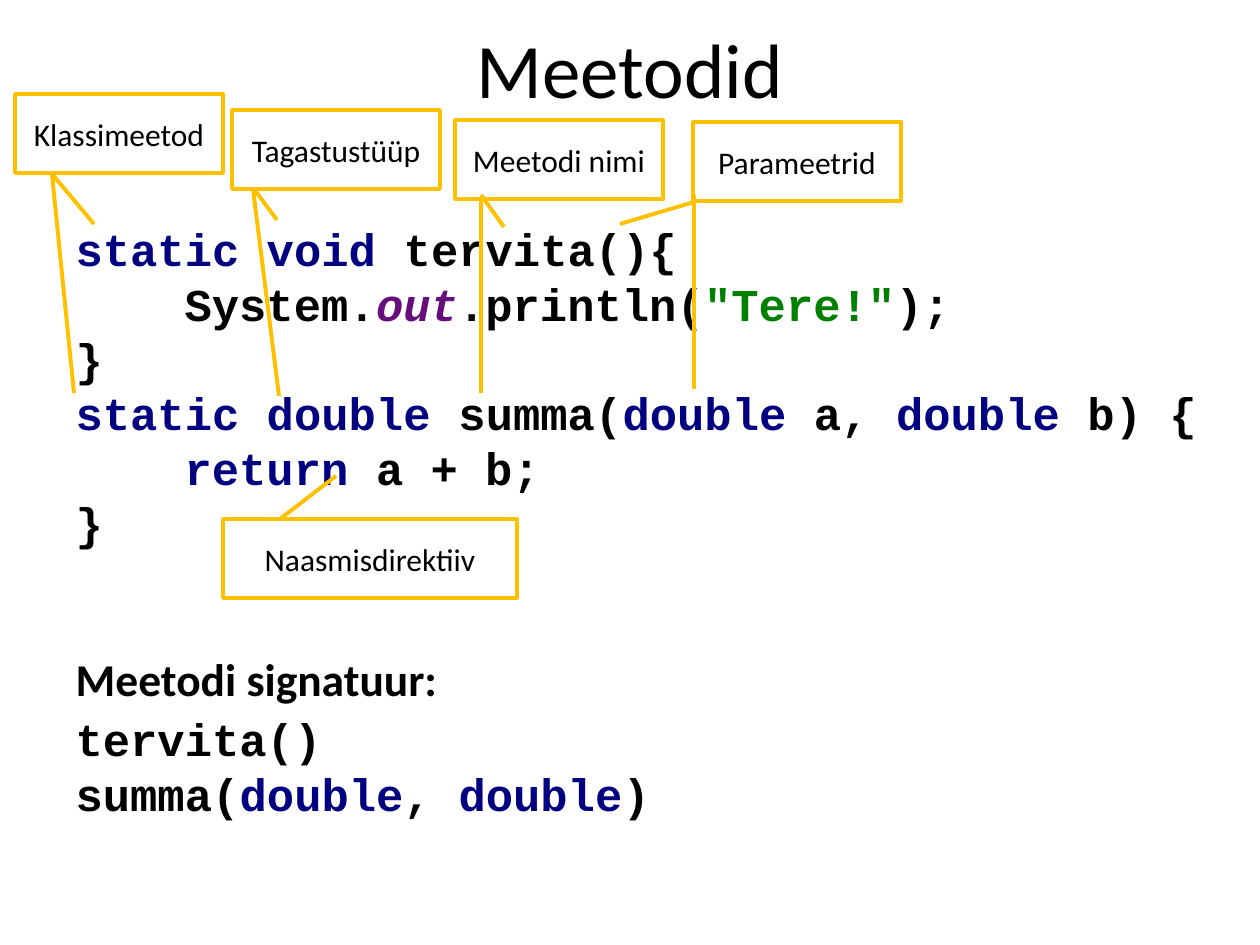
import pptx
import pptx.util
import pptx.dml.color
import pptx.enum.shapes
import pptx.enum.text
import pptx.oxml.ns
import lxml.etree

PX = 914400 / 126
COLORS = {
    "text": "000000",
    "keyword": "000080",
    "field": "660E7A",
    "string": "008000",
    "paper": "FFFFFF",
    "callout": "FFC000",
}


def emu(*lengths):
    return [round(length * PX) for length in lengths]


def add_run(paragraph, text, font, size, color="text"):
    run = paragraph.add_run()
    run.text = text
    run.font.name = font
    run.font.size = pptx.util.Pt(size)
    run.font.color.rgb = pptx.dml.color.RGBColor.from_string(COLORS[color])
    return run


presentation = pptx.Presentation()
presentation.slide_width, presentation.slide_height = emu(1260, 945)
slide = presentation.slides.add_slide(presentation.slide_layouts[1])
paper = pptx.dml.color.RGBColor.from_string(COLORS["paper"])
amber = pptx.dml.color.RGBColor.from_string(COLORS["callout"])

heading = slide.shapes.title
heading.left, heading.top, heading.width, heading.height = emu(63, 9, 1134, 118)
heading.text_frame.vertical_anchor = pptx.enum.text.MSO_ANCHOR.MIDDLE
heading_line = heading.text_frame.paragraphs[0]
heading_line.alignment = pptx.enum.text.PP_ALIGN.CENTER
add_run(heading_line, "Meetodid", "Calibri", 44)

code = slide.placeholders[1]
code.left, code.top, code.width, code.height = emu(63, 203, 1153, 658)
code.fill.solid()
code.fill.fore_color.rgb = paper
code_frame = code.text_frame
code_frame.word_wrap = True
code_frame.auto_size = pptx.enum.text.MSO_AUTO_SIZE.NONE
code_frame.vertical_anchor = pptx.enum.text.MSO_ANCHOR.TOP
code_frame.margin_top = emu(18)[0]

# indent in px, space before in points, font, runs
code_lines = [
    (0, 0, "Courier New", [("static void ", "keyword"), ("tervita(){", "text")]),
    (109, 0, "Courier New", [("System.", "text"), ("out", "field"), (".println(", "text"),
                             ("\"Tere!\"", "string"), (");", "text")]),
    (0, 0, "Courier New", [("}", "text")]),
    (0, 0, "Courier New", [("static double ", "keyword"), ("summa(", "text"),
                           ("double ", "keyword"), ("a, ", "text"),
                           ("double ", "keyword"), ("b) {", "text")]),
    (109, 0, "Courier New", [("return ", "keyword"), ("a + b;", "text")]),
    (0, 0, "Courier New", [("}", "text")]),
    (0, 58, "Calibri", [("Meetodi signatuur:", "text")]),
    (0, 3, "Courier New", [("tervita()", "text")]),
    (0, 0, "Courier New", [("summa(", "text"), ("double", "keyword"), (", ", "text"),
                           ("double", "keyword"), (")", "text")]),
]
for number, (indent, gap, font, pieces) in enumerate(code_lines):
    line = code_frame.add_paragraph() if number else code_frame.paragraphs[0]
    line.alignment = pptx.enum.text.PP_ALIGN.LEFT
    line.line_spacing = pptx.util.Pt(31.3)
    line.space_before = pptx.util.Pt(gap)
    line.space_after = pptx.util.Pt(0)
    properties = line._p.get_or_add_pPr()
    properties.set("marL", str(emu(indent)[0]))
    properties.set("indent", "0")
    lxml.etree.SubElement(properties, pptx.oxml.ns.qn("a:buNone"))
    for text, color in pieces:
        piece = add_run(line, text, font, 26, color)
        piece.font.bold = True
        piece.font.italic = color == "field"

callouts = [
    ("Klassimeetod", 15, 94, 208, [(52, 174, 94, 224), (52, 174, 74, 393)]),
    ("Tagastustüüp", 232, 110, 208, [(254, 189, 277, 220), (253, 189, 279, 396)]),
    ("Meetodi nimi", 455, 120, 208, [(481, 199, 481, 393), (481, 195, 504, 227)]),
    ("Parameetrid", 693, 122, 208, [(694, 195, 694, 389), (694, 202, 620, 224)]),
    ("Naasmisdirektiiv", 223, 519, 294, [(336, 476, 280, 519)]),
]
for label, left, top, width, pointers in callouts:
    callout = slide.shapes.add_shape(
        pptx.enum.shapes.MSO_SHAPE.RECTANGLE, *emu(left, top, width, 79))
    callout.shadow.inherit = False
    callout.fill.solid()
    callout.fill.fore_color.rgb = paper
    callout.line.color.rgb = amber
    callout.line.width = pptx.util.Pt(2)
    callout.text_frame.word_wrap = True
    callout.text_frame.vertical_anchor = pptx.enum.text.MSO_ANCHOR.MIDDLE
    label_line = callout.text_frame.paragraphs[0]
    label_line.alignment = pptx.enum.text.PP_ALIGN.CENTER
    add_run(label_line, label, "Calibri", 18)
    for ends in pointers:
        pointer = slide.shapes.add_connector(
            pptx.enum.shapes.MSO_CONNECTOR.STRAIGHT, *emu(*ends))
        pointer.line.color.rgb = amber
        pointer.line.width = pptx.util.Pt(2.25)
        lxml.etree.SubElement(pointer._element.spPr, pptx.oxml.ns.qn("a:effectLst"))

presentation.save("out.pptx")
